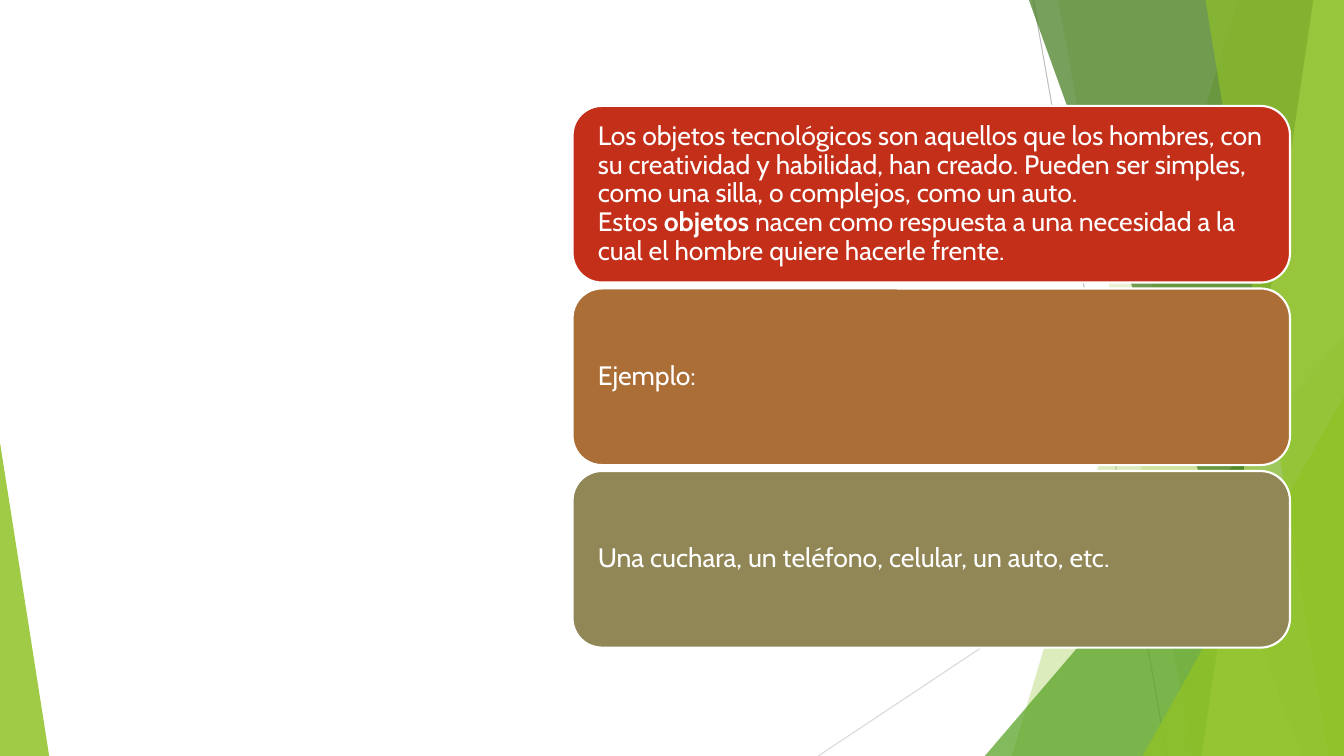
from lxml import etree
from pptx import Presentation
from pptx.dml.color import RGBColor
from pptx.enum.shapes import MSO_CONNECTOR, MSO_SHAPE
from pptx.enum.text import MSO_ANCHOR, PP_ALIGN
from pptx.oxml.ns import qn
from pptx.util import Cm, Pt

STRAIGHT = MSO_CONNECTOR.STRAIGHT
TRIANGLE = MSO_SHAPE.ISOSCELES_TRIANGLE
ROUNDED = MSO_SHAPE.ROUNDED_RECTANGLE
MIDDLE = MSO_ANCHOR.MIDDLE
LEFT = PP_ALIGN.LEFT

COLORS = {
    "white": "FFFFFF", "gray": "BFBFBF", "light gray": "D9D9D9",
    "lime": "90C226", "green": "54A021", "dark green": "3F7819", "pale lime": "C0E474",
    "red": "C42F1A", "brown": "AB6E37", "olive": "918655",
}

# Card colour, then lines of (text, bold) runs
CARDS = [
    ("red", [
        [("Los objetos tecnológicos son aquellos que los hombres, con su creatividad "
          "y habilidad, han creado. Pueden ser simples, como una silla, o complejos, "
          "como un auto.", False)],
        [("Estos ", False), ("objetos", True),
         (" nacen como respuesta a una necesidad a la cual el hombre quiere "
          "hacerle frente.", False)],
    ]),
    ("brown", [[("Ejemplo:", False)]]),
    ("olive", [[("Una cuchara, un teléfono, celular, un auto, etc.", False)]]),
]

# Lengths in centimetres
SLIDE_W, SLIDE_H = 33.87, 19.05
RAYS = [
    ("gray", (26.04, 0), (29.41, SLIDE_H)),
    ("light gray", (SLIDE_W, 10.24), (20.62, SLIDE_H)),
]
# Bands run to the right edge: colour, opacity %, left edge at top and bottom.
# Corners stand on the bottom edge: colour, opacity %, left, top, width, apex.
FACETS = [
    ("band", "lime", 30, (31.19, 25.5)),
    ("band", "lime", 20, (26.67, 30.05)),
    ("corner", "green", 72, (24.82, 8.46, 9.05, 1)),
    ("band", "dark green", 70, (25.93, 32.79)),
    ("band", "pale lime", 70, (33.1, 30.28)),
    ("band", "lime", 65, (30.38, 33.48)),
    ("corner", "lime", 80, (28.8, 9.98, 5.07, 1)),
    ("corner", "lime", 85, (0, 11.15, 1.24, 0)),
]
CARD_LEFT, CARD_TOP, CARD_W, CARD_H, CARD_STEP = 14.43, 2.67, 18.08, 4.45, 4.6

FRAME_FORMAT = {
    "word_wrap": True, "vertical_anchor": MIDDLE,
    "margin_left": Cm(0.42), "margin_right": Cm(0.42),
    "margin_top": Cm(0.42), "margin_bottom": Cm(0.42),
}
PARAGRAPH_FORMAT = {"alignment": LEFT, "line_spacing": 0.9}
FONT_FORMAT = {"name": "Cabin", "size": Pt(19)}


def apply(target, values):
    for name, value in values.items():
        setattr(target, name, value)


def rgb(color):
    return RGBColor.from_string(COLORS[color])


def fill_shape(shape, color, opacity=100):
    shape.shadow.inherit = False
    shape.fill.solid()
    shape.fill.fore_color.rgb = rgb(color)
    if opacity < 100:
        solid = shape.fill._xPr.find(qn("a:solidFill"))
        etree.SubElement(solid[0], qn("a:alpha"), val=str(opacity * 1000))


def add_ray(shapes, color, start, end):
    ray = shapes.add_connector(STRAIGHT, *map(Cm, start + end))
    ray.line.color.rgb = rgb(color)
    ray.line.width = Pt(0.75)
    etree.SubElement(ray._element.spPr, qn("a:effectLst"))


def add_facet(shapes, kind, color, opacity, geometry):
    if kind == "band":
        top_x, bottom_x = geometry
        outline = shapes.build_freeform(Cm(top_x), 0)
        corners = [(SLIDE_W, 0), (SLIDE_W, SLIDE_H), (bottom_x, SLIDE_H)]
        outline.add_line_segments([(Cm(x), Cm(y)) for x, y in corners])
        facet = outline.convert_to_shape()
    else:
        left, top, width, apex = geometry
        facet = shapes.add_shape(TRIANGLE, Cm(left), Cm(top), Cm(width), Cm(SLIDE_H - top))
        facet.adjustments[0] = apex
    fill_shape(facet, color, opacity)
    facet.line.fill.background()


def add_card(shapes, index, color, lines):
    top = CARD_TOP + index * CARD_STEP
    card = shapes.add_shape(ROUNDED, Cm(CARD_LEFT), Cm(top), Cm(CARD_W), Cm(CARD_H))
    fill_shape(card, color)
    card.line.color.rgb = rgb("white")
    card.line.width = Pt(1.5)
    apply(card.text_frame, FRAME_FORMAT)
    paragraph = card.text_frame.paragraphs[0]
    apply(paragraph, PARAGRAPH_FORMAT)
    apply(paragraph.font, FONT_FORMAT)
    for number, line in enumerate(lines):
        if number:
            paragraph.add_line_break()
        for text, bold in line:
            run = paragraph.add_run()
            run.text = text
            apply(run.font, {**FONT_FORMAT, "bold": bold})
            run.font.color.rgb = rgb("white")


def main():
    deck = Presentation()
    deck.slide_width, deck.slide_height = Cm(SLIDE_W), Cm(SLIDE_H)
    blank_layout = deck.slide_layouts[6]
    shapes = deck.slides.add_slide(blank_layout).shapes
    for ray in RAYS:
        add_ray(shapes, *ray)
    for facet in FACETS:
        add_facet(shapes, *facet)
    for index, card in enumerate(CARDS):
        add_card(shapes, index, *card)
    deck.save("out.pptx")


if __name__ == "__main__":
    main()
